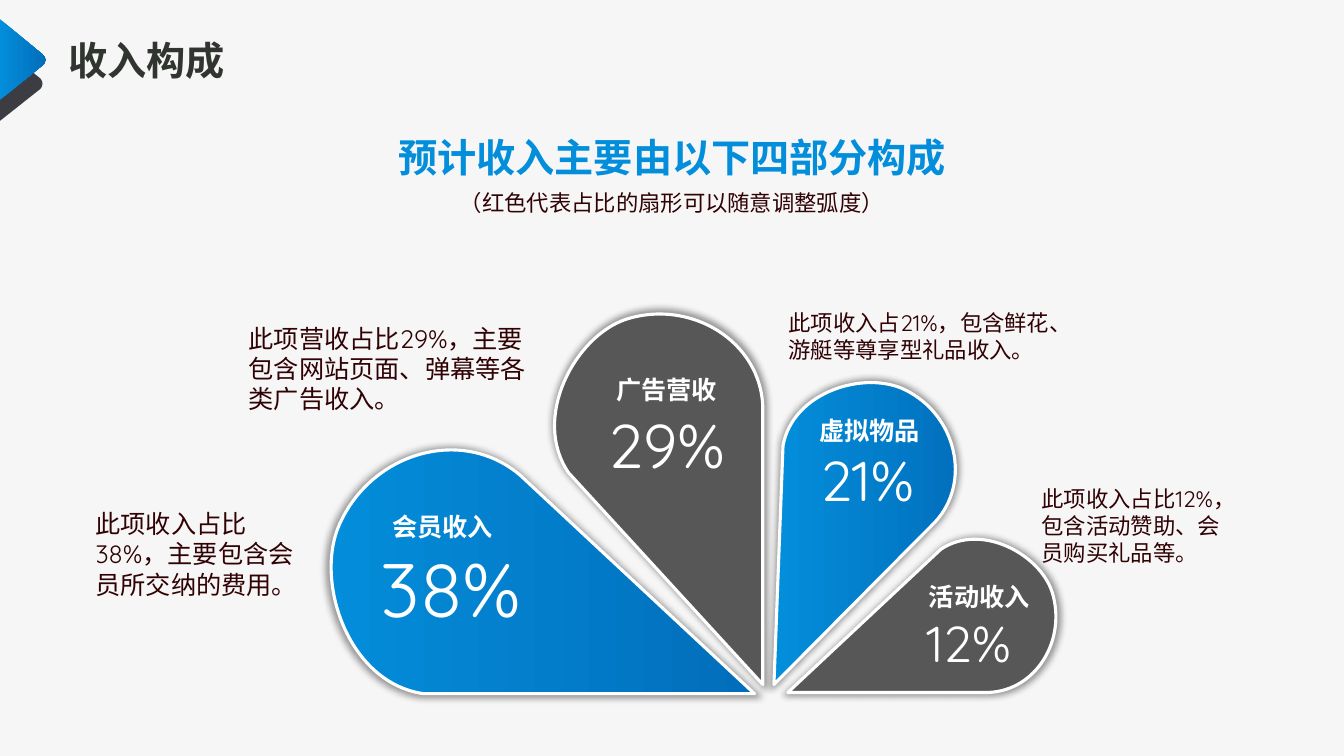
import dataclasses

import lxml.etree
import pptx
import pptx.dml.color
import pptx.enum.lang
import pptx.enum.text
import pptx.oxml.ns
import pptx.util

Cm = pptx.util.Cm
Pt = pptx.util.Pt
qn = pptx.oxml.ns.qn


@dataclasses.dataclass(frozen=True)
class Theme:
    font: str = "Quicksand"
    background: str = "F6F6F6"
    blue: tuple = ("038EDB", "026EBB")
    grey: str = "575757"
    dark: str = "3C3D42"
    title: str = "313530"
    body: str = "300204"
    white: str = "FFFFFF"
    shadow: str = "000000"
    heading_size: int = 28
    label_size: int = 18
    small_size: int = 16
    outline: float = 2.25


def rgb(value):
    return pptx.dml.color.RGBColor.from_string(value)


class SlidePainter:
    def __init__(self, slide, theme):
        self.slide = slide
        self.theme = theme
        slide.background.fill.solid()
        slide.background.fill.fore_color.rgb = rgb(theme.background)

    def text(self, content, place, size, color, bold=False, centered=False, wrap=True):
        box = self.slide.shapes.add_textbox(*(Cm(length) for length in place))
        frame = box.text_frame
        frame.text = content
        frame.word_wrap = wrap
        frame.auto_size = pptx.enum.text.MSO_AUTO_SIZE.SHAPE_TO_FIT_TEXT
        para = frame.paragraphs[0]
        if centered:
            para.alignment = pptx.enum.text.PP_ALIGN.CENTER
        span = para.runs[0]
        span.font.name = self.theme.font
        span.font.size = Pt(size)
        span.font.bold = bold
        span.font.color.rgb = rgb(color)
        span.font.language_id = pptx.enum.lang.MSO_LANGUAGE_ID.SIMPLIFIED_CHINESE
        lxml.etree.SubElement(span.font._element, qn("a:ea"), typeface=self.theme.font)

    def outline(self, points, fill):
        """Start, a straight side, then curves of three points each, closed.

        A single point left over at the end is one more straight side.
        """
        start, *others = [(Cm(x), Cm(y)) for x, y in points]
        builder = self.slide.shapes.build_freeform(*start)
        builder.add_line_segments(others, close=True)
        shape = builder.convert_to_shape()
        sides = list(shape._element.iter(qn("a:lnTo")))
        for first in range(1, len(sides) - 2, 3):
            bend = lxml.etree.Element(qn("a:cubicBezTo"))
            sides[first].addprevious(bend)
            for side in sides[first:first + 3]:
                bend.append(side[0])
                side.getparent().remove(side)
        shape.shadow.inherit = False
        shape.line.fill.background()
        if isinstance(fill, tuple):
            shape.fill.gradient()
            shape.fill.gradient_angle = 0
            for stop, color, position in zip(shape.fill.gradient_stops, fill, (0, 1)):
                stop.color.rgb = rgb(color)
                stop.position = position
        else:
            shape.fill.solid()
            shape.fill.fore_color.rgb = rgb(fill)
        return shape

    def petal(self, points, fill):
        shape = self.outline(points, fill)
        shape.line.color.rgb = rgb(self.theme.white)
        shape.line.width = Pt(self.theme.outline)
        effects = shape._element.spPr.find(qn("a:effectLst"))
        shadow = lxml.etree.SubElement(effects, qn("a:outerShdw"), blurRad=str(Pt(5)),
                                       sx="102000", sy="102000", algn="ctr",
                                       rotWithShape="0")
        color = lxml.etree.SubElement(shadow, qn("a:srgbClr"), val=self.theme.shadow)
        lxml.etree.SubElement(color, qn("a:alpha"), val="40000")


def main():
    theme = Theme()
    deck = pptx.Presentation()
    deck.slide_width, deck.slide_height = Cm(33.88), Cm(19.05)
    painter = SlidePainter(deck.slides.add_slide(deck.slide_layouts[6]), theme)

    # Title with its corner mark
    painter.text("收入构成", (1.47, 0.79, 13, 1.45), theme.heading_size, theme.title, bold=True)
    painter.outline([(-0.03, 1.12), (1.02, 1.98), (1.09, 2.06), (1.09, 2.16), (1.02, 2.24),
                     (-0.03, 3.07)], theme.dark)
    painter.outline([(-0.03, 0.46), (1.07, 1.37), (1.17, 1.45), (1.17, 1.57), (1.07, 1.65),
                     (-0.03, 2.54)], theme.blue)

    # Petals: tip, shoulder, then two curves
    petals = [
        (theme.grey, [(19.86, 17.45), (24.92, 17.45), (26.14, 17.4), (26.9, 16.1),
                      (26.52, 14.91), (26.21, 13.97), (24.74, 13.16), (23.72, 13.84)]),
        (theme.blue, [(19.51, 17.25), (23.57, 13.16), (24.51, 12.14), (24.1, 10.46),
                      (22.83, 9.83), (21.82, 9.32), (19.99, 9.86), (19.74, 11.23)]),
        (theme.grey, [(19.23, 17.25), (19.23, 10.26), (19.18, 8.59), (17.4, 7.52),
                      (15.77, 8.05), (14.5, 8.48), (13.39, 10.52), (14.33, 11.91)]),
        (theme.blue, [(19.02, 17.48), (13.13, 11.99), (11.66, 10.72), (9.37, 11.4),
                      (8.56, 13.21), (7.92, 14.63), (8.76, 17.2), (10.67, 17.48)]),
    ]
    for fill, points in petals:
        painter.petal(points, fill)

    # Petal labels and shares
    shares = [
        ("会员收入", (9.58, 12.76), "38%", (9.3, 13.54, 4.14, 2.57), 54),
        ("广告营收", (15.23, 9.32), "29%", (15.08, 10.13, 3.45, 2.13), 44),
        ("虚拟物品", (20.35, 10.34), "21%", (20.26, 11.1, 3.2, 1.96), 40),
        ("活动收入", (23.11, 14.53), "12%", (22.96, 15.29, 2.92, 1.8), 36),
    ]
    for label, corner, share, place, size in shares:
        painter.text(label, (*corner, 3.15, 1.02), theme.label_size, theme.white,
                     bold=True, centered=True, wrap=False)
        painter.text(share, place, size, theme.white, centered=True, wrap=False)

    # Notes beside the petals
    notes = [
        ("此项收入占比38%，主要包含会员所交纳的费用。",
         (2.16, 12.69, 5.87, 2.57), theme.label_size),
        ("此项营收占比29%，主要包含网站页面、弹幕等各类广告收入。",
         (6.02, 8.02, 7.82, 2.57), theme.label_size),
        ("此项收入占21%，包含鲜花、游艇等尊享型礼品收入。",
         (19.63, 7.67, 7.87, 1.63), theme.small_size),
        ("此项收入占比12%，包含活动赞助、会员购买礼品等。",
         (26.01, 12.11, 5.46, 2.31), theme.small_size),
    ]
    for content, place, size in notes:
        painter.text(content, place, size, theme.body)

    # Heading
    painter.text("预计收入主要由以下四部分构成", (7.27, 3.23, 19.35, 1.45),
                 theme.heading_size, theme.blue[0], bold=True, centered=True)
    painter.text("（红色代表占比的扇形可以随意调整弧度）", (9.54, 4.65, 14.81, 0.94),
                 theme.small_size, theme.body, centered=True)

    deck.save("out.pptx")


if __name__ == "__main__":
    main()
